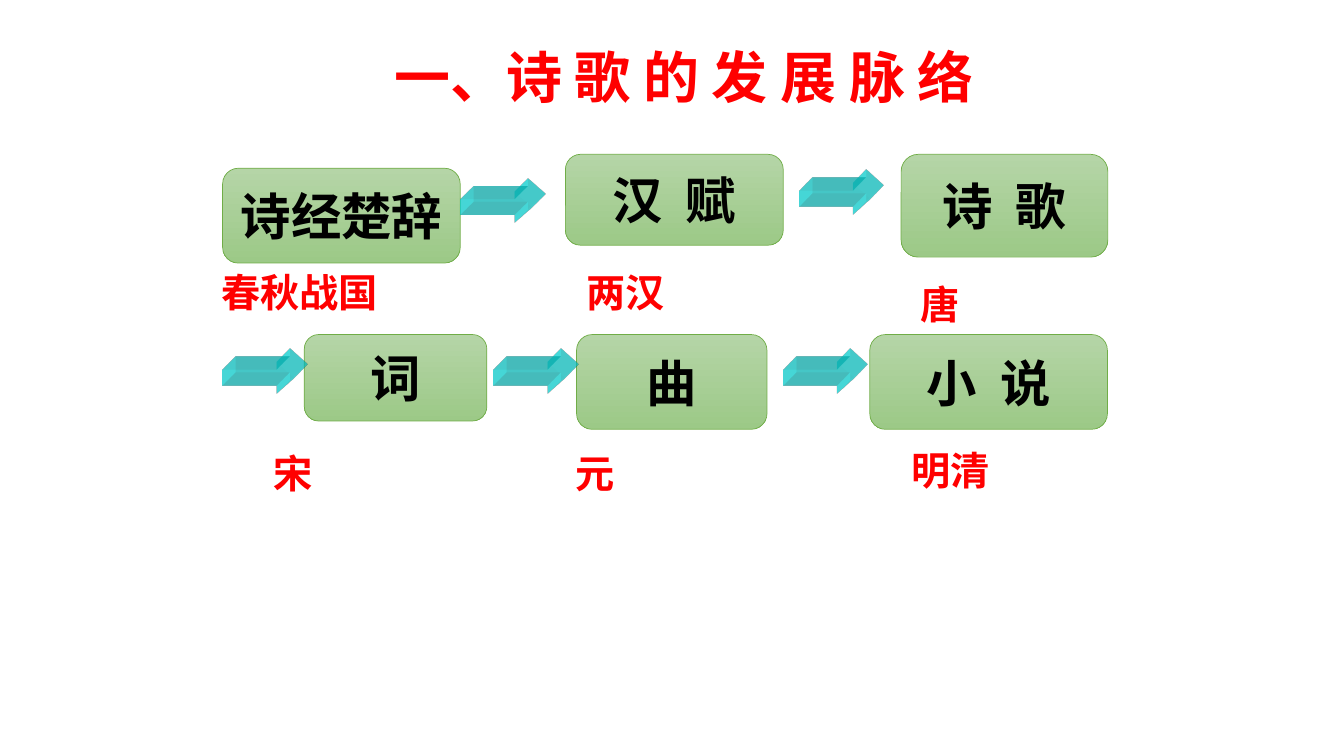
from collections import namedtuple
from dataclasses import dataclass

from lxml import etree
from pptx import Presentation
from pptx.dml.color import RGBColor
from pptx.enum import shapes, text
from pptx.oxml import ns, parse_xml
from pptx.util import Cm, Pt


@dataclass(frozen=True)
class Theme:
    red = RGBColor(0xFF, 0x00, 0x00)
    black = RGBColor(0x00, 0x00, 0x00)
    green_line = RGBColor(0x70, 0xAD, 0x47)
    green_top = RGBColor(0xB5, 0xD5, 0xA7)
    green_bottom = RGBColor(0x9C, 0xC9, 0x87)
    cyan = RGBColor(0x00, 0xFF, 0xFF)
    arrow_alpha = 49000
    title_font = "Noto Sans CJK JP"
    font = "Arial"
    title_size = Pt(40)
    genre_size = Pt(36)
    period_size = Pt(28)


THEME = Theme()
ARROW_SIZE = (1.8, 0.79)
ARROW_DEPTH = Cm(0.95)
PERIOD_SIZE = (5.59, 1.45)

# Offsets in cm from the corner of the row; arrow is the one leading to the stage
Stage = namedtuple("Stage", "genre period box label arrow")

EARLY_ROW = [
    Stage("诗经楚辞", "春秋战国", (0, 0.35, 5.99, 2.39), (-0.28, 2.74), None),
    Stage("汉  赋", "两汉", (8.64, 0, 5.49, 2.29), (8.92, 2.74), (6, 0.94)),
    Stage("诗  歌", "唐", (17.1, 0, 5.21, 2.59), (17.33, 3.04), (14.53, 0.73)),
]
LATE_ROW = [
    Stage("词", "宋", (2.06, 0, 4.6, 2.18), (1.04, 2.77), (0, 0.69)),
    Stage("曲", "元", (8.92, 0, 4.8, 2.39), (8.64, 2.77), (6.84, 0.69)),
    Stage("小  说", "明清", (16.31, 0, 5.99, 2.39), (17.1, 2.7), (14.13, 0.69)),
]


def write(frame, words, size, color, font, align):
    frame.text = words
    paragraph = frame.paragraphs[0]
    paragraph.alignment = align
    for run in paragraph.runs:
        run.font.size, run.font.bold, run.font.name = size, True, font
        run.font.color.rgb = color


def add_title(slide, left, top, width, height):
    title = slide.shapes.title
    title.left, title.top, title.width, title.height = map(Cm, (left, top, width, height))
    frame = title.text_frame
    write(frame, "一、诗 歌 的 发 展 脉 络", THEME.title_size, THEME.red,
          THEME.title_font, text.PP_ALIGN.LEFT)
    frame.auto_size = text.MSO_AUTO_SIZE.NONE
    frame.vertical_anchor = text.MSO_ANCHOR.TOP
    frame.word_wrap = True
    run_props = frame.paragraphs[0].runs[0].font._element
    east_asian = etree.SubElement(run_props, ns.qn("a:ea"))
    east_asian.set("typeface", THEME.title_font)


def add_genre(slide, left, top, width, height, genre):
    box = slide.shapes.add_shape(shapes.MSO_SHAPE.ROUNDED_RECTANGLE,
                                 *map(Cm, (left, top, width, height)))
    box.shadow.inherit = False
    box.fill.gradient()
    box.fill.gradient_angle = 270
    for stop, color in zip(box.fill.gradient_stops, (THEME.green_top, THEME.green_bottom)):
        stop.color.rgb = color
    box.line.color.rgb = THEME.green_line
    box.line.width = Pt(0.5)
    frame = box.text_frame
    frame.word_wrap = False
    frame.vertical_anchor = text.MSO_ANCHOR.MIDDLE
    write(frame, genre, THEME.genre_size, THEME.black, THEME.font, text.PP_ALIGN.CENTER)


def add_period(slide, left, top, period):
    label = slide.shapes.add_textbox(*map(Cm, (left, top, *PERIOD_SIZE)))
    label.text_frame.word_wrap = True
    write(label.text_frame, period, THEME.period_size, THEME.red, THEME.font,
          text.PP_ALIGN.LEFT)


def add_arrow(slide, left, top):
    arrow = slide.shapes.add_shape(shapes.MSO_SHAPE.RIGHT_ARROW,
                                   *map(Cm, (left, top, *ARROW_SIZE)))
    arrow.adjustments[1] = 0.564
    arrow.shadow.inherit = False
    arrow.fill.solid()
    arrow.fill.fore_color.rgb = THEME.cyan
    arrow.line.fill.background()
    props = arrow._element.spPr
    color = props.find(f"{ns.qn('a:solidFill')}/{ns.qn('a:srgbClr')}")
    etree.SubElement(color, ns.qn("a:alpha")).set("val", str(THEME.arrow_alpha))
    # Oblique extrusion towards the upper right
    props.append(parse_xml(
        f'<a:scene3d {ns.nsdecls("a")}><a:camera prst="legacyObliqueTopRight"/>'
        '<a:lightRig rig="legacyFlat3" dir="b"/></a:scene3d>'))
    props.append(parse_xml(
        f'<a:sp3d {ns.nsdecls("a")} extrusionH="{ARROW_DEPTH}" prstMaterial="legacyMatte">'
        f'<a:extrusionClr><a:srgbClr val="{THEME.cyan}"/></a:extrusionClr></a:sp3d>'))


def add_row(slide, left, top, stages):
    for stage in stages:
        x, y, width, height = stage.box
        add_genre(slide, left + x, top + y, width, height, stage.genre)
        x, y = stage.label
        add_period(slide, left + x, top + y, stage.period)
    # Arrows lie over the boxes they touch
    for stage in stages:
        if stage.arrow:
            x, y = stage.arrow
            add_arrow(slide, left + x, top + y)


def main():
    deck = Presentation()
    deck.slide_width, deck.slide_height = Cm(33.87), Cm(19.05)
    slide = deck.slides.add_slide(deck.slide_layouts.get_by_name("Title Only"))
    add_title(slide, 9.68, 0.94, 15.6, 1.96)
    add_row(slide, 5.61, 3.89, EARLY_ROW)
    add_row(slide, 5.61, 8.43, LATE_ROW)
    deck.save("out.pptx")


if __name__ == "__main__":
    main()
